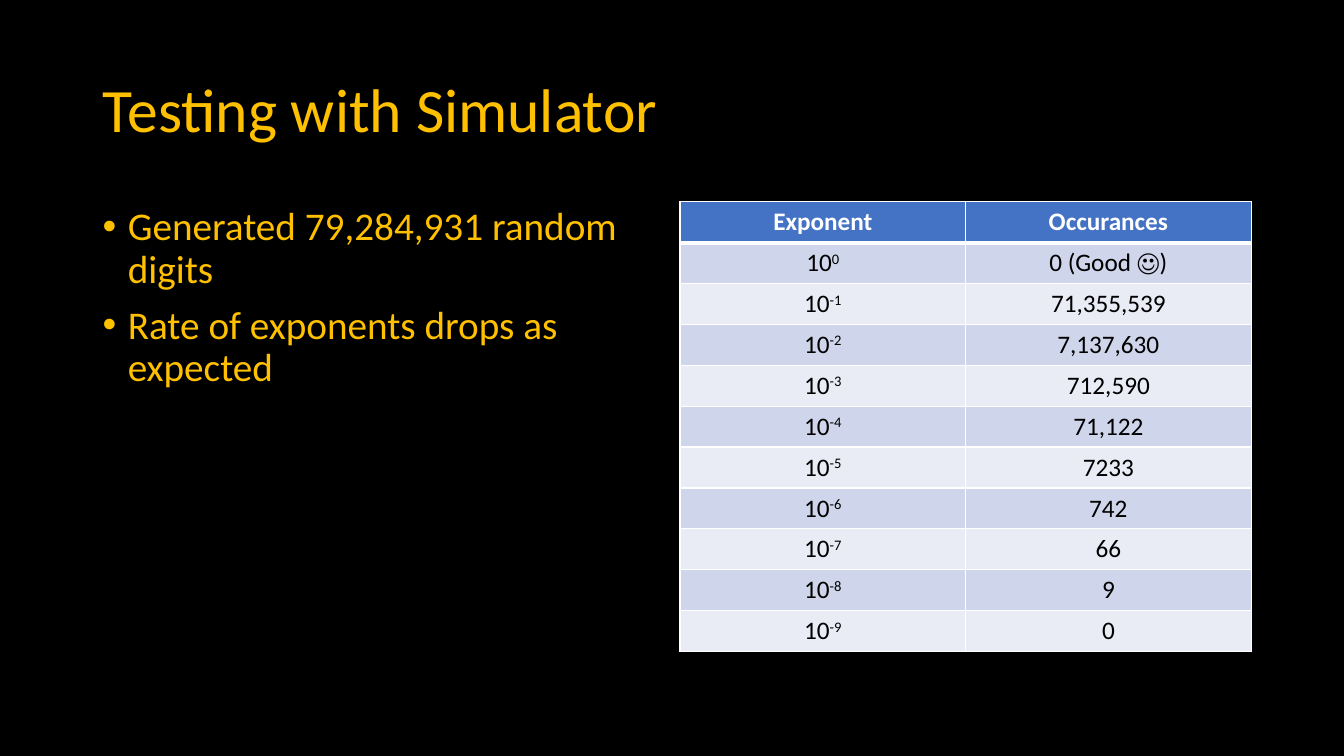
from lxml.etree import SubElement
from pptx import Presentation
from pptx.dml.color import RGBColor
from pptx.enum.text import MSO_ANCHOR, MSO_AUTO_SIZE, PP_ALIGN
from pptx.oxml import parse_xml
from pptx.oxml.ns import nsdecls, qn
from pptx.util import Inches, Pt

WIDE, HIGH = Inches(13.33), Inches(7.5)
HUES = {"back": "000000", "gold": "FFC000", "head": "4472C4",
        "dark": "CFD5EA", "pale": "E9EBF5", "line": "FFFFFF", "ink": "000000"}

# Shares of the slide's width and height: left, top, width, height
AREAS = {"title": (0.069, 0.053, 0.863, 0.193),
         "list": (0.069, 0.267, 0.425, 0.635),
         "table": (0.506, 0.267, 0.425, 0.595)}

FONTS = {"title": {"size": Pt(44), "bold": False, "hue": "gold"},
         "list": {"size": Pt(28), "bold": False, "hue": "gold"},
         "head": {"size": Pt(18), "bold": True, "hue": "line"},
         "cell": {"size": Pt(18), "bold": False, "hue": "ink"}}

POINTS = ["Generated 79,284,931 random digits",
          "Rate of exponents drops as expected"]
HEADS = ["Exponent", "Occurances"]
COUNTS = ["0 (Good ☺)", "71,355,539", "7,137,630", "712,590", "71,122",
          "7233", "742", "66", "9", "0"]


def rgb(hue):
    return RGBColor.from_string(HUES[hue])


def area(name):
    x, y, w, h = AREAS[name]
    return [int(v) for v in (x * WIDE, y * HIGH, w * WIDE, h * HIGH)]


def style(item, values):
    for key, value in values.items():
        setattr(item, key, value)


def add_run(para, text, look, base=None):
    run = para.add_run()
    run.text = text
    form = dict(FONTS[look])
    hue = form.pop("hue")
    style(run.font, {"name": "Calibri", **form})
    run.font.color.rgb = rgb(hue)
    if base:
        run.font._element.set("baseline", str(base))


def add_title(slide, text):
    title = slide.shapes.title
    style(title, dict(zip(("left", "top", "width", "height"), area("title"))))
    frame = title.text_frame
    style(frame, {"word_wrap": True, "auto_size": MSO_AUTO_SIZE.NONE,
                  "vertical_anchor": MSO_ANCHOR.MIDDLE})
    para = frame.paragraphs[0]
    style(para, {"alignment": PP_ALIGN.LEFT, "line_spacing": 0.9})
    add_run(para, text, "title")


def add_list(slide, points):
    frame = slide.shapes.add_textbox(*area("list")).text_frame
    frame.word_wrap = True
    for i, text in enumerate(points):
        para = frame.add_paragraph() if i else frame.paragraphs[0]
        props = para._p.get_or_add_pPr()
        props.set("marL", str(Inches(0.25)))
        props.set("indent", str(Inches(-0.25)))
        SubElement(props, qn("a:buFont"), typeface="Arial")
        SubElement(props, qn("a:buChar"), char="•")
        style(para, {"line_spacing": 0.9, "space_before": Pt(10 if i else 0)})
        add_run(para, text, "list")


def add_edges(cell, row):
    props = cell._tc.get_or_add_tcPr()
    thick = {(0, "B"), (1, "T")}
    for i, side in enumerate("LRTB"):
        width = Pt(3 if (row, side) in thick else 1)
        props.insert(i, parse_xml(
            f'<a:ln{side} {nsdecls("a")} w="{width}"><a:solidFill>'
            f'<a:srgbClr val="{HUES["line"]}"/></a:solidFill></a:ln{side}>'))


def fill_cell(cell, row, hue, text, look, power=None):
    cell.fill.solid()
    cell.fill.fore_color.rgb = rgb(hue)
    add_edges(cell, row)
    para = cell.text_frame.paragraphs[0]
    para.alignment = PP_ALIGN.CENTER
    add_run(para, text, look)
    if power is not None:
        add_run(para, power, look, 30000)


def add_grid(slide, heads, counts):
    table = slide.shapes.add_table(
        len(counts) + 1, len(heads), *area("table")).table
    for col, text in enumerate(heads):
        fill_cell(table.cell(0, col), 0, "head", text, "head")
    # Each row is the next lower power of ten
    for row, count in enumerate(counts, 1):
        hue = "dark" if row % 2 else "pale"
        fill_cell(table.cell(row, 0), row, hue, "10", "cell", str(1 - row))
        fill_cell(table.cell(row, 1), row, hue, count, "cell")


def main():
    deck = Presentation()
    style(deck, {"slide_width": WIDE, "slide_height": HIGH})
    slide = deck.slides.add_slide(deck.slide_layouts[5])
    # Background
    slide.background.fill.solid()
    slide.background.fill.fore_color.rgb = rgb("back")
    # Content
    add_title(slide, "Testing with Simulator")
    add_list(slide, POINTS)
    add_grid(slide, HEADS, COUNTS)
    deck.save("out.pptx")


if __name__ == "__main__":
    main()
